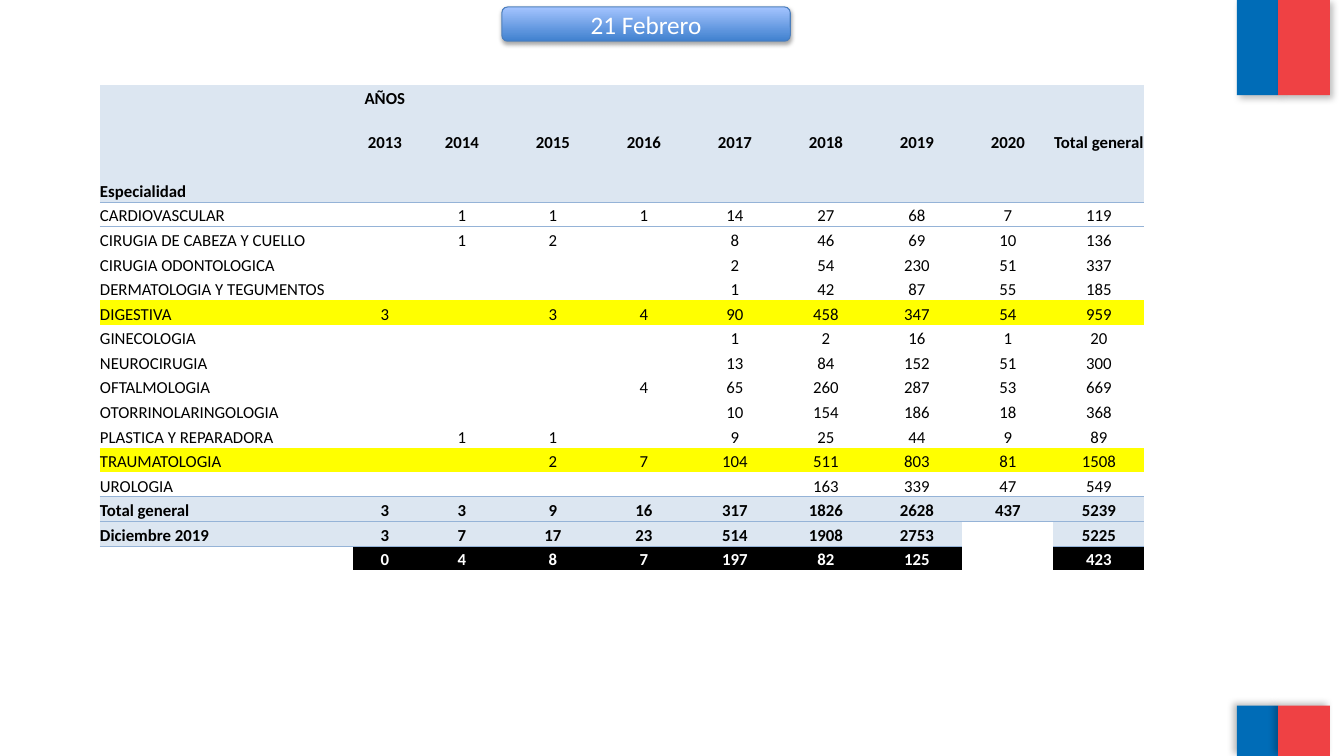
from lxml import etree
from pptx import Presentation
from pptx.dml.color import RGBColor
from pptx.enum import shapes, text
from pptx.oxml.ns import qn
from pptx.util import Pt

FONT = "Calibri"
PALE, YELLOW, BLACK, RULE = "DCE6F1", "FFFF00", "000000", "95B3D7"
ROW_H, YEAR_ROW_H = 17.57, 31
COL_W = [181, 45] + [65] * 8

HEADER = [
    ",AÑOS,,,,,,,,",
    ",2013,2014,2015,2016,2017,2018,2019,2020,Total general",
    ",,,,,,,,,",
    "Especialidad,,,,,,,,,",
]
SPECIALTIES = [
    "CARDIOVASCULAR,,1,1,1,14,27,68,7,119",
    "CIRUGIA DE CABEZA Y CUELLO,,1,2,,8,46,69,10,136",
    "CIRUGIA ODONTOLOGICA,,,,,2,54,230,51,337",
    "DERMATOLOGIA Y TEGUMENTOS,,,,,1,42,87,55,185",
    "DIGESTIVA,3,,3,4,90,458,347,54,959",
    "GINECOLOGIA,,,,,1,2,16,1,20",
    "NEUROCIRUGIA,,,,,13,84,152,51,300",
    "OFTALMOLOGIA,,,,4,65,260,287,53,669",
    "OTORRINOLARINGOLOGIA,,,,,10,154,186,18,368",
    "PLASTICA Y REPARADORA,,1,1,,9,25,44,9,89",
    "TRAUMATOLOGIA,,,2,7,104,511,803,81,1508",
    "UROLOGIA,,,,,,163,339,47,549",
]
TOTALS = [
    "Total general,3,3,9,16,317,1826,2628,437,5239",
    "Diciembre 2019,3,7,17,23,514,1908,2753,,5225",
]
DIFFERENCE = ",0,4,8,7,197,82,125,,423"
HIGHLIGHTED = ("DIGESTIVA", "TRAUMATOLOGIA")


def rgb(hex_):
    return RGBColor.from_string(hex_)


def add_run(p, value, size, color, bold=False):
    r = p.add_run()
    r.text = value
    f = r.font
    f.name, f.size, f.bold = FONT, Pt(size), bold
    f.color.rgb = rgb(color)


def add_shadow(sp, alpha, blur, dist, angle):
    sp.shadow.inherit = False
    effects = sp._element.spPr.find(qn("a:effectLst"))
    shadow = etree.SubElement(effects, qn("a:outerShdw"), blurRad=str(Pt(blur)),
                              dist=str(Pt(dist)), dir=str(angle * 60000),
                              algn="ctr", rotWithShape="0")
    color = etree.SubElement(shadow, qn("a:srgbClr"), val="000000")
    etree.SubElement(color, qn("a:alpha"), val=str(alpha * 1000))


def add_flag(s, x, y, h, angle):
    """Two-colour band on the right edge."""
    for dx, w, color in ((0, 29.5, "006CB7"), (29.5, 37, "EF4144")):
        sp = s.shapes.add_shape(shapes.MSO_SHAPE.RECTANGLE,
                                Pt(x + dx), Pt(y), Pt(w), Pt(h))
        sp.fill.solid()
        sp.fill.fore_color.rgb = rgb(color)
        sp.line.fill.background()
        add_shadow(sp, 25, 5, 3, angle)


def add_title(s, x, y, w, h):
    """Gradient pill with the title placeholder on top."""
    box = Pt(x), Pt(y), Pt(w), Pt(h)
    sp = s.shapes.add_shape(shapes.MSO_SHAPE.ROUNDED_RECTANGLE, *box)
    sp.fill.gradient()
    sp.fill.gradient_angle = 90
    for stop, pos, color in zip(sp.fill.gradient_stops, (0, 1), ("3F80CE", "A4C4FF")):
        stop.position = pos
        stop.color.rgb = rgb(color)
    sp.line.color.rgb = rgb("4B7EBC")
    sp.line.width = Pt(0.75)
    add_shadow(sp, 35, 3.1, 1.8, 90)

    title = s.shapes.title
    title.left, title.top, title.width, title.height = box
    sp._element.addnext(title._element)
    tf = title.text_frame
    tf.margin_left = tf.margin_right = tf.margin_top = tf.margin_bottom = 0
    tf.vertical_anchor = text.MSO_ANCHOR.MIDDLE
    tf.auto_size = text.MSO_AUTO_SIZE.NONE
    p = tf.paragraphs[0]
    p.alignment = text.PP_ALIGN.CENTER
    add_run(p, "21 Febrero", 18, "FFFFFF")


def add_rule(cell, tag):
    ln = etree.Element(qn(tag), w=str(Pt(0.5)))
    fill = etree.SubElement(ln, qn("a:solidFill"))
    etree.SubElement(fill, qn("a:srgbClr"), val=RULE)
    cell._tc.get_or_add_tcPr().insert(0, ln)


def fill_cell(cell, value, fill, color, bold, centred):
    cell.margin_left = cell.margin_right = cell.margin_top = cell.margin_bottom = 0
    cell.vertical_anchor = text.MSO_ANCHOR.BOTTOM
    if fill:
        cell.fill.solid()
        cell.fill.fore_color.rgb = rgb(fill)
    else:
        cell.fill.background()
    p = cell.text_frame.paragraphs[0]
    if centred:
        p.alignment = text.PP_ALIGN.CENTER
    if value:
        add_run(p, value, 12, color, bold)
    else:  # keeps blank cells from stretching the row
        etree.SubElement(p._p, qn("a:endParaRPr"), sz="1200")


def add_waiting_list(s, x, y):
    """Table of cases by specialty and year."""
    rows = [line.split(",") for line in HEADER + SPECIALTIES + TOTALS + [DIFFERENCE]]
    first_total = len(HEADER) + len(SPECIALTIES)
    last = len(rows) - 1
    ruled = (len(HEADER), first_total, first_total + 1)  # rows with a line above
    heights = [YEAR_ROW_H if i == 1 else ROW_H for i in range(len(rows))]

    frame = s.shapes.add_table(len(rows), len(COL_W), Pt(x), Pt(y),
                               Pt(sum(COL_W)), Pt(sum(heights)))
    tbl = frame.table
    tbl.first_row = tbl.horz_banding = False
    style = tbl._tbl.tblPr.find(qn("a:tableStyleId"))
    style.text = "{2D5ABB26-0587-4C30-8999-92F81FD0307C}"  # no style, no grid
    for col, w in zip(tbl.columns, COL_W):
        col.width = Pt(w)

    for i, (row, h) in enumerate(zip(rows, heights)):
        tbl.rows[i].height = Pt(h)
        in_body = len(HEADER) <= i < first_total
        for j, value in enumerate(row):
            cell = tbl.cell(i, j)
            gap = i > first_total and not value
            if in_body:
                fill = YELLOW if row[0] in HIGHLIGHTED else None
            else:
                fill = None if gap else BLACK if i == last else PALE
            fill_cell(cell, value, fill, "FFFFFF" if i == last else BLACK,
                      not in_body, j > 0)
            # Thin lines around the header and total rows
            if i + 1 in ruled and not (i == first_total and not rows[i + 1][j]):
                add_rule(cell, "a:lnB")
            if i in ruled and not gap:
                add_rule(cell, "a:lnT")
        if row[0].startswith("DERMATOLOGIA"):
            tbl.cell(i, 0).merge(tbl.cell(i, 1))


def main():
    prs = Presentation()
    prs.slide_width, prs.slide_height = Pt(960), Pt(540)
    s = prs.slides.add_slide(prs.slide_layouts[5])
    add_flag(s, 883.5, 0, 68, 45)
    add_flag(s, 883.5, 504, 36, 215)
    add_title(s, 358.5, 5, 206, 24.5)
    add_waiting_list(s, 71.4, 60.6)
    prs.save("out.pptx")


if __name__ == "__main__":
    main()
